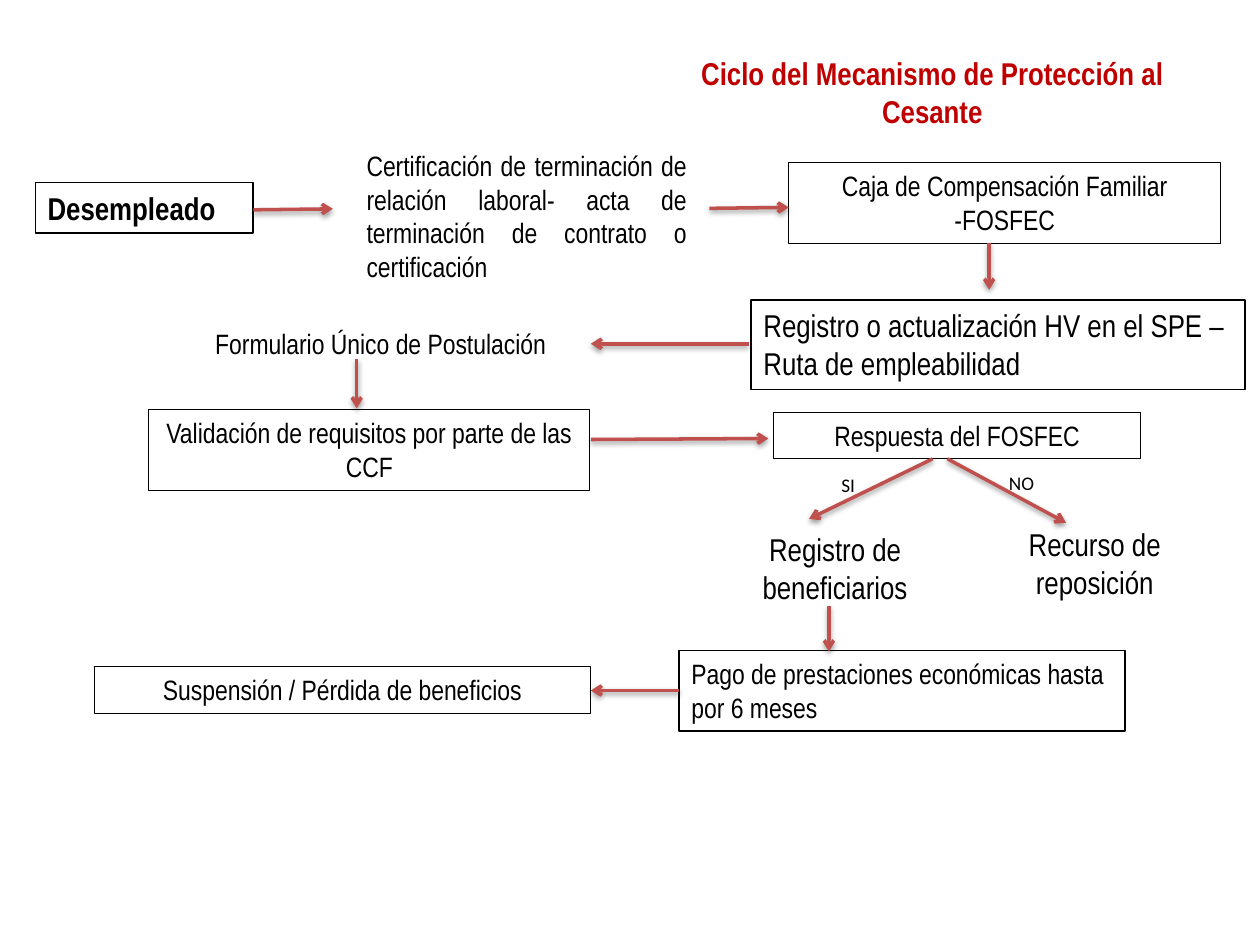
from lxml.etree import SubElement as Sub
from pptx import Presentation
from pptx.dml.color import RGBColor
from pptx.enum.shapes import MSO_CONNECTOR as Link, MSO_SHAPE as Form
from pptx.enum.text import MSO_ANCHOR as Anchor, MSO_AUTO_SIZE as Fit, PP_ALIGN as Align
from pptx.oxml.ns import qn
from pptx.util import Cm, Pt

BLACK = RGBColor(0x00, 0x00, 0x00)
RED = RGBColor(0xC0, 0x00, 0x00)
BRICK = RGBColor(0xC0, 0x50, 0x4D)
LEFT, MID, FULL = Align.LEFT, Align.CENTER, Align.JUSTIFY


class Chart:
    def __init__(self, slide):
        self.slide = slide
        self.font = "Arial Narrow"

    def label(self, shape, text, size, align, bold, color, font):
        frame = shape.text_frame
        frame.word_wrap = True
        frame.auto_size = Fit.SHAPE_TO_FIT_TEXT
        frame.vertical_anchor = Anchor.TOP
        para = frame.paragraphs[0]
        para.alignment = align
        run = para.add_run()
        run.text = text
        run.font.name = font or self.font
        run.font.size = Pt(size)
        run.font.bold = bold
        run.font.color.rgb = color

    def text(self, at, text, size=16, align=MID, bold=False, color=BLACK, font=None):
        shape = self.slide.shapes.add_textbox(*map(Cm, at))
        self.label(shape, text, size, align, bold, color, font)

    def box(self, at, text, size=16, align=MID, bold=False):
        shape = self.slide.shapes.add_shape(Form.RECTANGLE, *map(Cm, at))
        shape.shadow.inherit = False
        shape.fill.background()
        shape.line.color.rgb = BLACK
        shape.line.width = Pt(0.75)
        self.label(shape, text, size, align, bold, BLACK, None)

    def arrow(self, *ends):
        link = self.slide.shapes.add_connector(Link.STRAIGHT, *map(Cm, ends))
        link.line.color.rgb = BRICK
        link.line.width = Pt(2)
        props = link._element.spPr
        Sub(props.find(qn("a:ln")), qn("a:tailEnd"), type="arrow")
        # Soft shadow straight below the line
        shade = Sub(Sub(props, qn("a:effectLst")), qn("a:outerShdw"),
                    blurRad=str(Pt(3.1)), dist=str(Pt(1.6)),
                    dir="5400000", rotWithShape="0")
        tone = Sub(shade, qn("a:srgbClr"), val=str(BLACK))
        Sub(tone, qn("a:alpha"), val="38000")


def main():
    deck = Presentation()
    deck.slide_width, deck.slide_height = Cm(25.4), Cm(19.05)
    flow = Chart(deck.slides.add_slide(deck.slide_layouts[6]))

    # Title
    flow.text((13.69, 0.97, 10.21, 1.8), "Ciclo del Mecanismo de Protección al Cesante",
              18, bold=True, color=RED)

    # Request
    flow.box((0.71, 3.68, 4.39, 1.02), "Desempleado", 18, LEFT, True)
    flow.text((7.14, 2.87, 6.96, 3), "Certificación de terminación de relación laboral- "
              "acta de terminación de contrato o certificación", align=FULL)
    flow.box((15.9, 3.28, 8.71, 1.63), "Caja de Compensación Familiar -FOSFEC")

    # Registration and review
    flow.box((15.14, 6.05, 9.96, 1.8),
             "Registro o actualización HV en el SPE –Ruta de empleabilidad", 18, LEFT)
    flow.text((4.09, 6.45, 7.39, 0.94), "Formulario Único de Postulación", align=FULL)
    flow.box((3, 8.26, 8.89, 1.63), "Validación de requisitos por parte de las CCF")
    flow.box((15.6, 8.31, 7.39, 0.94), "Respuesta del FOSFEC")

    # Outcomes
    flow.text((14.88, 10.57, 3.91, 1.8), "Registro de beneficiarios", 18)
    flow.text((20.24, 10.46, 3.66, 1.8), "Recurso de reposición", 18)
    flow.text((16.71, 9.42, 1.65, 0.74), "SI", 11, LEFT, font="Calibri")
    flow.text((20.09, 9.37, 1.65, 0.74), "NO", 11, LEFT, font="Calibri")
    flow.box((13.69, 13.11, 8.99, 1.63),
             "Pago de prestaciones económicas hasta por 6 meses", align=LEFT)
    flow.box((1.9, 13.44, 10.01, 0.94), "Suspensión / Pérdida de beneficios")

    # Arrows, in order of the steps
    for ends in (
        (5.11, 4.23, 6.71, 4.21),
        (14.3, 4.2, 15.9, 4.18),
        (19.94, 4.9, 19.94, 5.84),
        (15.09, 6.93, 11.91, 6.93),
        (7.19, 7.24, 7.19, 8.23),
        (11.91, 8.86, 15.49, 8.84),
        (18.8, 9.25, 16.31, 10.46),
        (19.1, 9.25, 21.49, 10.54),
        (16.71, 12.22, 16.71, 13.13),
        (13.69, 13.92, 11.91, 13.92),
    ):
        flow.arrow(*ends)

    deck.save("out.pptx")


if __name__ == "__main__":
    main()
